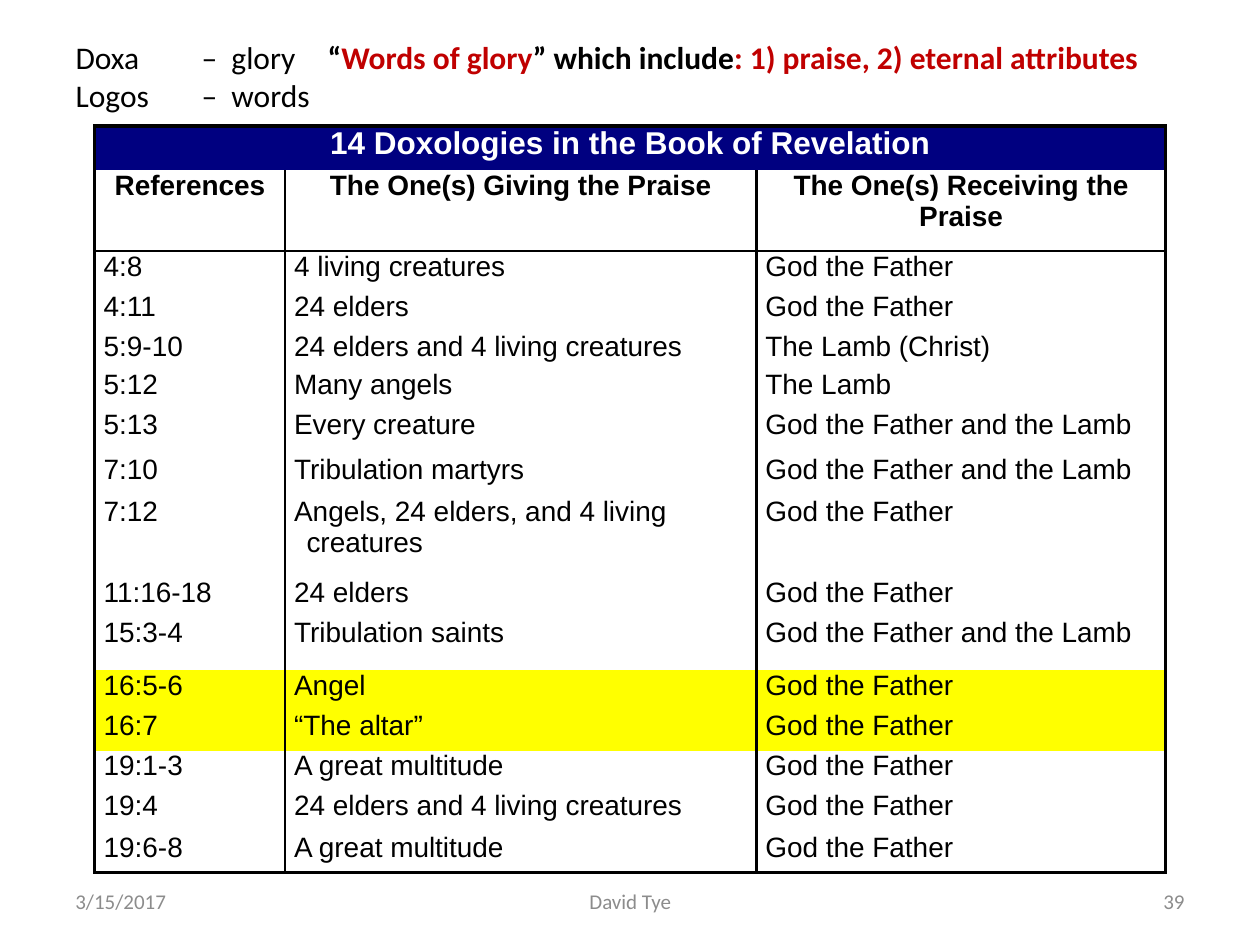
from lxml import etree
from pptx import Presentation
from pptx.dml.color import RGBColor
from pptx.enum.text import MSO_ANCHOR, MSO_AUTO_SIZE, PP_ALIGN
from pptx.oxml.ns import qn
from pptx.util import Cm, Pt

LEFT, CENTER, RIGHT = PP_ALIGN.LEFT, PP_ALIGN.CENTER, PP_ALIGN.RIGHT
TOP, MIDDLE = MSO_ANCHOR.TOP, MSO_ANCHOR.MIDDLE
FIT_SHAPE = MSO_AUTO_SIZE.SHAPE_TO_FIT_TEXT
TITLE_ONLY = 5
NO_STYLE = "{2D5ABB26-0587-4C30-8999-92F81FD0307C}"

COLORS = {
    "black": "000000",
    "white": "FFFFFF",
    "red": "C00000",
    "navy": "000080",
    "yellow": "FFFF00",
    "gray": "8C8C8C",
}

DEFINITIONS = [
    [
        ("Doxa \t–  glory\t", "black", False),
        ("“", "black", True),
        ("Words of glory", "red", True),
        ("” which include", "black", True),
        (": 1) praise, 2) eternal attributes", "red", True),
    ],
    [("Logos \t–  words", "black", False)],
]

CAPTION = "14 Doxologies in the Book of Revelation"
HEADINGS = (
    "References",
    "The One(s) Giving the Praise",
    "The One(s) Receiving the Praise",
)
FATHER = "God the Father"
BOTH = "God the Father and the Lamb"
DOXOLOGIES = [
    ("4:8", "4 living creatures", FATHER),
    ("4:11", "24 elders", FATHER),
    ("5:9-10", "24 elders and 4 living creatures", "The Lamb (Christ)"),
    ("5:12", "Many angels", "The Lamb"),
    ("5:13", "Every creature", BOTH),
    ("7:10", "Tribulation martyrs", BOTH),
    ("7:12", "Angels, 24 elders, and 4 living creatures", FATHER),
    ("11:16-18", "24 elders", FATHER),
    ("15:3-4", "Tribulation saints", BOTH),
    ("16:5-6", "Angel", FATHER),
    ("16:7", "“The altar”", FATHER),
    ("19:1-3", "A great multitude", FATHER),
    ("19:4", "24 elders and 4 living creatures", FATHER),
    ("19:6-8", "A great multitude", FATHER),
]
HIGHLIGHTED = {"16:5-6", "16:7"}
COLUMN_WIDTHS = (3.84, 9.5, 8.25)
ROW_HEIGHT = 0.81
SPECIAL_HEIGHTS = {0: 0.89, 1: 1.63, 4: 0.76, 6: 0.91, 7: 0.84, 8: 1.63, 10: 1.07, 14: 0.84}
OUTER, INNER = 2.25, 1.5


def style_font(font, name, size, color, bold=False):
    """Set the typeface, size, colour and weight of a font."""
    font.name = name
    font.size = Pt(size)
    font.bold = bold
    font.color.rgb = RGBColor.from_string(COLORS[color])


def add_definitions(slide, left, top, width, height):
    """Place the word definitions in the title placeholder."""
    title = slide.shapes.title
    title.left, title.top, title.width, title.height = map(Cm, (left, top, width, height))
    frame = title.text_frame
    frame.word_wrap = True
    frame.auto_size = FIT_SHAPE
    frame.vertical_anchor = TOP
    for index, pieces in enumerate(DEFINITIONS):
        line = frame.add_paragraph() if index else frame.paragraphs[0]
        line.alignment = LEFT
        tabs = etree.SubElement(line._p.get_or_add_pPr(), qn("a:tabLst"))
        for stop in (2.54, 5.08):
            etree.SubElement(tabs, qn("a:tab"), pos=str(Cm(stop)), algn="l")
        style_font(line.font, "Calibri", 18, "black")
        for wording, color, bold in pieces:
            run = line.add_run()
            run.text = wording
            run.font.bold = bold
            run.font.color.rgb = RGBColor.from_string(COLORS[color])


def set_borders(cell, widths):
    """Draw black cell borders, given as points by side; zero means no line."""
    properties = cell._tc.get_or_add_tcPr()
    for side in "LRTB":
        width = widths.get(side, 0)
        line = etree.SubElement(properties, qn(f"a:ln{side}"), w=str(Pt(width)))
        if width:
            fill = etree.SubElement(line, qn("a:solidFill"))
            etree.SubElement(fill, qn("a:srgbClr"), val=COLORS["black"])
        else:
            etree.SubElement(line, qn("a:noFill"))


def fill_cell(cell, wording, size, color, background, heading):
    """Write one table cell with its text, spacing and background."""
    cell.margin_left = cell.margin_right = Cm(0.18)
    cell.margin_top = cell.margin_bottom = 0
    if background:
        cell.fill.solid()
        cell.fill.fore_color.rgb = RGBColor.from_string(COLORS[background])
    else:
        cell.fill.background()
    paragraph = cell.text_frame.paragraphs[0]
    paragraph.text = wording
    paragraph.alignment = CENTER if heading else LEFT
    paragraph.space_before = paragraph.space_after = Pt(6 if heading else 3)
    if not heading:
        properties = paragraph._p.get_or_add_pPr()
        properties.set("marL", str(Cm(0.25)))
        properties.set("indent", str(Cm(-0.25)))
    style_font(paragraph.font, "Arial", size, color, heading)


def add_doxology_table(slide, left, top):
    """Build the table of doxologies with its caption and headings."""
    rows = [(CAPTION, "", ""), HEADINGS, *DOXOLOGIES]
    heights = [SPECIAL_HEIGHTS.get(index, ROW_HEIGHT) for index in range(len(rows))]
    frame = slide.shapes.add_table(
        len(rows), len(HEADINGS), Cm(left), Cm(top), Cm(sum(COLUMN_WIDTHS)), Cm(sum(heights))
    )
    table = frame.table
    table.first_row = table.horz_banding = False
    table._tbl.tblPr.find(qn("a:tableStyleId")).text = NO_STYLE
    for column, width in zip(table.columns, COLUMN_WIDTHS):
        column.width = Cm(width)
    table.cell(0, 0).merge(table.cell(0, 2))

    last_row, last_column = len(rows) - 1, len(HEADINGS) - 1
    horizontal = {0: {"T": OUTER}, 1: {"B": INNER}, 2: {"T": INNER}, last_row: {"B": OUTER}}
    for r, (row, height) in enumerate(zip(rows, heights)):
        table.rows[r].height = Cm(height)
        inner = INNER if r else 0
        for c, wording in enumerate(row):
            cell = table.cell(r, c)
            sides = {
                "L": inner if c else OUTER,
                "R": OUTER if c == last_column or r == 0 else inner,
            }
            set_borders(cell, {**sides, **horizontal.get(r, {})})
            if r == 0:
                fill_cell(cell, wording, 18, "white", "navy", True)
            else:
                background = "yellow" if row[0] in HIGHLIGHTED else None
                fill_cell(cell, wording, 16, "black", background, r == 1)


def add_footer(slide, left, top, width, height):
    """Place the date, author and page number along the bottom."""
    parts = [
        ("3/15/2017", 0, 5.92, LEFT),
        ("David Tye", 7.41, 8.05, CENTER),
        ("39", width - 5.92, 5.92, RIGHT),
    ]
    for wording, offset, part_width, alignment in parts:
        box = slide.shapes.add_textbox(Cm(left + offset), Cm(top), Cm(part_width), Cm(height))
        box.text_frame.word_wrap = True
        box.text_frame.vertical_anchor = MIDDLE
        paragraph = box.text_frame.paragraphs[0]
        paragraph.text = wording
        paragraph.alignment = alignment
        style_font(paragraph.font, "Calibri", 12, "gray")


def main():
    """Build the slide and save it."""
    presentation = Presentation()
    presentation.slide_width, presentation.slide_height = Cm(25.4), Cm(19.05)
    slide = presentation.slides.add_slide(presentation.slide_layouts[TITLE_ONLY])
    add_footer(slide, 1.27, 17.65, 22.86, 1.02)
    add_doxology_table(slide, 1.91, 2.54)
    add_definitions(slide, 1.27, 0.64, 22.02, 1.8)
    presentation.save("out.pptx")


if __name__ == "__main__":
    main()
